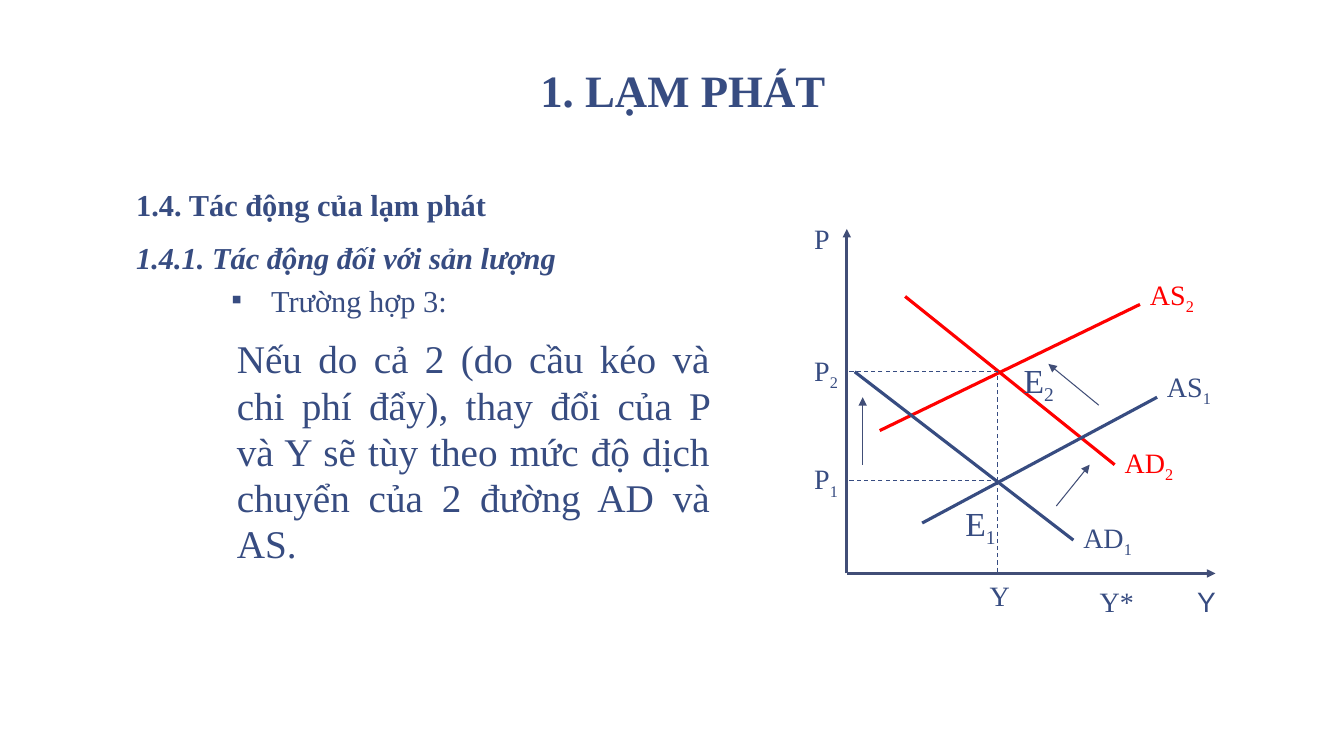
from typing import NamedTuple

from pptx import Presentation
from pptx import util as u
from pptx.dml.color import RGBColor
from pptx.enum import dml, shapes, text
from pptx.oxml.ns import qn

HUES = {"navy": "374C81", "slate": "414E77", "red": "FF0000"}
SERIF = "Times New Roman"
Point = tuple[float, float]


class Line(NamedTuple):
    start: Point
    end: Point
    hue: str = "navy"
    width: float = 2.25
    dash: bool = False
    arrow: bool = False


class Label(NamedTuple):
    name: str
    sub: str
    left: float
    top: float
    width: float = 1.9
    size: float = 20
    hue: str = "navy"
    face: str = SERIF
    lead: float = 1.0


class Curve(NamedTuple):
    name: str
    sub: str
    hue: str
    start: Point
    end: Point
    lift: float


def style(font, size: float, hue: str = "navy", face: str = SERIF) -> None:
    font.size, font.name = u.Pt(size), face
    font.color.rgb = RGBColor.from_string(HUES[hue])


def place(shape, left: float, top: float, width: float, height: float) -> None:
    shape.left, shape.top = u.Cm(left), u.Cm(top)
    shape.width, shape.height = u.Cm(width), u.Cm(height)


def pad(frame) -> None:
    frame.margin_left = frame.margin_right = u.Cm(0.33)
    frame.margin_top = frame.margin_bottom = u.Cm(0.18)
    frame.auto_size = text.MSO_AUTO_SIZE.NONE


def indent(para, left: float, first: float, mark: str = "") -> None:
    props = para._p.get_or_add_pPr()
    props.set("marL", str(u.Cm(left)))
    props.set("indent", str(u.Cm(first)))
    if mark:
        props.makeelement(qn("a:buFont"), {})
        font = props.makeelement(qn("a:buFont"), {"typeface": SERIF})
        props.append(font)
        props.append(props.makeelement(qn("a:buChar"), {"char": mark}))
    else:
        props.append(props.makeelement(qn("a:buNone"), {}))


def draw_line(tree, line: Line) -> None:
    ends = [u.Cm(v) for v in (*line.start, *line.end)]
    link = tree.add_connector(shapes.MSO_CONNECTOR.STRAIGHT, *ends)
    link.line.color.rgb = RGBColor.from_string(HUES[line.hue])
    link.line.width = u.Pt(line.width)
    if line.dash:
        link.line.dash_style = dml.MSO_LINE.DASH
    if line.arrow:
        stroke = link.line._get_or_add_ln()
        stroke.append(stroke.makeelement(qn("a:tailEnd"), {"type": "triangle"}))
    props = link._element.spPr
    props.append(props.makeelement(qn("a:effectLst"), {}))


def draw_label(tree, label: Label) -> None:
    box = tree.add_textbox(u.Cm(label.left), u.Cm(label.top),
                           u.Cm(label.width), u.Cm(1.1))
    box.text_frame.word_wrap = True
    para = box.text_frame.paragraphs[0]
    para.text = label.name
    para.line_spacing = label.lead
    if label.sub:
        tail = para.add_run()
        tail.text = label.sub
        tail._r.get_or_add_rPr().set("baseline", "-25000")
    for run in para.runs:
        style(run.font, label.size, label.hue, label.face)


def write_head(slide) -> None:
    title = slide.shapes.title
    place(title, 3.1, 0.2, 28.22, 2.92)
    frame = title.text_frame
    frame.text = "1. LẠM PHÁT"
    pad(frame)
    frame.vertical_anchor = text.MSO_ANCHOR.BOTTOM
    para = frame.paragraphs[0]
    para.alignment = text.PP_ALIGN.CENTER
    para.line_spacing = 0.85
    style(para.runs[0].font, 32)
    para.runs[0].font.bold = True


def write_list(slide) -> None:
    body = slide.placeholders[1]
    place(body, 3.1, 4.72, 28.22, 4.8)
    frame = body.text_frame
    frame.text = "\n".join(("1.4. Tác động của lạm phát",
                            "1.4.1. Tác động đối với sản lượng",
                            "Trường hợp 3:"))
    pad(frame)
    head, part, case = frame.paragraphs
    case.level = 2
    for para, gap in ((head, 0), (part, 18.7), (case, 10.7)):
        para.line_spacing, para.space_before = 0.75, u.Pt(gap)
        if para is case:
            indent(para, 3.4, -1.0, "▪")
        else:
            indent(para, 0, 0)
        font = para.runs[0].font
        style(font, 21.7)
        font.bold, font.italic = para is not case, para is part


def write_note(slide) -> None:
    box = slide.shapes.add_textbox(u.Cm(5.72), u.Cm(8.33), u.Cm(12.42), u.Cm(6.15))
    frame = box.text_frame
    frame.word_wrap = True
    frame.text = ("Nếu do cả 2 (do cầu kéo và chi phí đẩy), thay đổi của P và Y "
                  "sẽ tùy theo mức độ dịch chuyển của 2 đường AD và AS.")
    para = frame.paragraphs[0]
    para.alignment, para.line_spacing = text.PP_ALIGN.JUSTIFY, u.Pt(33)
    style(para.runs[0].font, 28)


# Key levels of the chart
LEFT, BASE, MID = 21.34, 14.45, 25.15
LOW, HIGH = 12.12, 9.37

CURVES = [
    Curve("AS", "2", "red", (22.17, 10.85), (28.73, 7.67), 0.79),
    Curve("AD", "2", "red", (22.81, 7.47), (28.09, 11.71), 0.61),
    Curve("AD", "1", "navy", (21.54, HIGH), (27.05, 13.61), 0.61),
    Curve("AS", "1", "navy", (23.24, 13.18), (29.16, 10.01), 0.82),
]
GUIDES = [Line((MID, LOW), end, width=0.75, dash=True)
          for end in ((MID, BASE), (LEFT, LOW), (MID, HIGH))]
GUIDES.append(Line((MID, HIGH), (LEFT, HIGH), width=0.75, dash=True))
SHIFTS = [Line(start, end, "slate", 0.75, arrow=True) for start, end in (
    ((21.74, 11.71), (21.74, 10.01)),
    ((26.62, 12.75), (27.46, 11.71)),
    ((27.69, 10.21), (26.42, 9.17)),
)]
AXES = [Line((LEFT, BASE), end, "slate", 2, arrow=True)
        for end in ((LEFT, 5.77), (30.63, BASE))]
LABELS = [Label("P", sub, 20.27, top, 1.27, lead=0.9)
          for sub, top in (("", 5.56), ("2", 8.79), ("1", 11.53))]
LABELS += [
    Label("E", "1", 24.08, 12.55, 2.1, 24),
    Label("E", "2", 25.55, 8.94, 1.5, 24),
    Label("Y", "", 24.69, BASE, 1.27),
    Label("Y*", "", 27.46, 14.6),
    Label("Y", "", 29.92, 14.6, face="Arial"),
]


def main() -> None:
    deck = Presentation()
    deck.slide_width, deck.slide_height = u.Cm(33.87), u.Cm(19.05)
    slide = deck.slides.add_slide(deck.slide_layouts[1])
    tree = slide.shapes

    # Text
    write_head(slide)
    write_list(slide)
    write_note(slide)

    # Chart
    curves = [Line(c.start, c.end, c.hue) for c in CURVES]
    for line in curves + GUIDES + SHIFTS + AXES:
        draw_line(tree, line)
    names = [Label(c.name, c.sub, c.end[0], c.end[1] - c.lift, hue=c.hue)
             for c in CURVES]
    for label in names + LABELS:
        draw_label(tree, label)

    deck.save("out.pptx")


if __name__ == "__main__":
    main()
